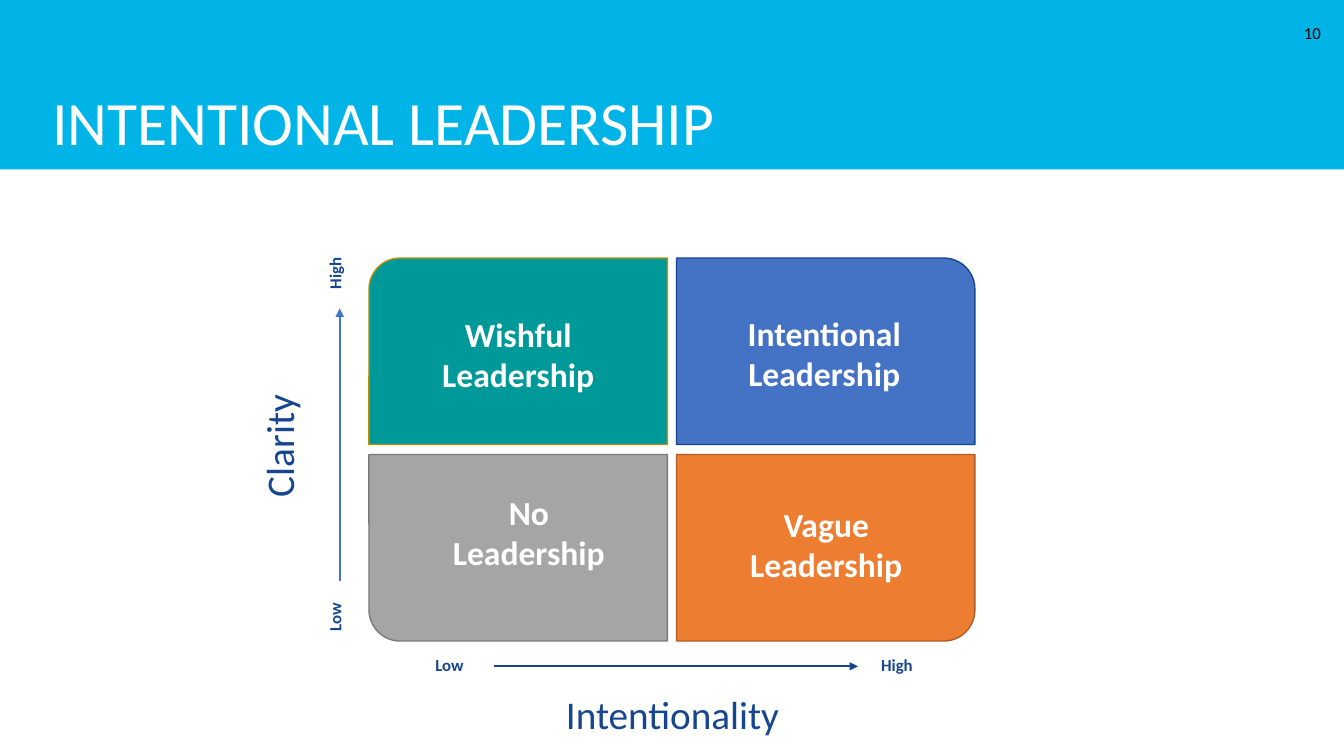
from lxml import etree
from pptx import Presentation
from pptx.dml.color import RGBColor
from pptx.enum import shapes, text
from pptx.oxml.ns import qn
from pptx.util import Inches, Pt

THEME = {
    "font": "Calibri",
    "band": "01B4E7", "white": "FFFFFF", "black": "000000",
    "navy": "16468F", "blue": "4472C4",
    "title": 44, "quadrant": 24, "axis": 28, "small": 12,
}

TITLE = "INTENTIONAL LEADERSHIP"
PAGE_NUMBER = "10"

# column, row, fill, outline, label, label place (left, top, width, height)
QUADRANTS = [
    (1, 0, "4472C4", "16468F", "Intentional Leadership", (7.14, 3.05, 2.07, 0.91)),
    (0, 0, "009999", "BD8E00", "Wishful Leadership", (4.14, 3.06, 2, 0.91)),
    (0, 1, "A5A5A5", "7A7A7A", "No Leadership", (4.22, 4.83, 2.05, 0.91)),
    (1, 1, "ED7D31", "AF5C24", "Vague Leadership", (7.16, 4.95, 2.07, 0.91)),
]
GRID_LEFT, GRID_TOP = 3.66, 2.56
CELL_WIDTH, CELL_HEIGHT = 2.96, 1.85
STEP_X, STEP_Y = 3.05, 1.95

# label, place, vertical
AXIS_NAMES = [
    ("Clarity", (2.48, 3.8, 0.67, 1.23), True),
    ("Intentionality", (4.65, 6.8, 4.04, 0.57), False),
]
AXIS_ENDS = [
    ("Low", (3.17, 5.84, 0.4, 0.52), True),
    ("High", (3.17, 2.45, 0.4, 0.52), True),
    ("Low", (4.22, 6.45, 0.52, 0.5), False),
    ("High", (8.64, 6.45, 0.62, 0.3), False),
]
# start, end, colour
ARROWS = [
    ((3.37, 5.76), (3.37, 3.06), THEME["blue"]),
    ((4.9, 6.61), (8.51, 6.61), THEME["navy"]),
]


def rgb(name):
    return RGBColor.from_string(name)


def add_block(page, kind, place, fill, outline=None):
    block = page.shapes.add_shape(kind, *map(Inches, place))
    block.shadow.inherit = False
    block.fill.solid()
    block.fill.fore_color.rgb = rgb(fill)
    if outline:
        block.line.color.rgb = rgb(outline)
        block.line.width = Pt(1)
    else:
        block.line.fill.background()
    return block


def add_text(page, words, place, *, size, color, bold=False, align="LEFT",
             anchor="TOP", vertical=False, bottom=0.05, spacing=None):
    box = page.shapes.add_textbox(*map(Inches, place))
    frame = box.text_frame
    frame.word_wrap = True
    frame.margin_bottom = Inches(bottom)
    frame.vertical_anchor = text.MSO_ANCHOR[anchor]
    if vertical:
        frame._txBody.bodyPr.set("vert", "vert270")
    para = frame.paragraphs[0]
    para.alignment = text.PP_ALIGN[align]
    para.line_spacing = spacing
    span = para.add_run()
    span.text = words
    span.font.name = THEME["font"]
    span.font.size = Pt(size)
    span.font.bold = bold
    span.font.color.rgb = rgb(color)


def add_arrow(page, start, end, color):
    arrow = page.shapes.add_connector(
        shapes.MSO_CONNECTOR.STRAIGHT, *map(Inches, start + end))
    arrow.line.color.rgb = rgb(color)
    arrow.line.width = Pt(1.5)
    etree.SubElement(arrow.line._get_or_add_ln(), qn("a:tailEnd"), type="triangle")
    etree.SubElement(arrow._element.spPr, qn("a:effectLst"))


def add_quadrant(page, column, row, fill, outline):
    """Draw one cell with its rounded corner turned to the outside of the grid."""
    place = (GRID_LEFT + column * STEP_X, GRID_TOP + row * STEP_Y,
             CELL_WIDTH, CELL_HEIGHT)
    cell = add_block(page, shapes.MSO_SHAPE.ROUND_1_RECTANGLE, place, fill, outline)
    frame = cell._element.spPr.get_or_add_xfrm()
    if column == 0:
        frame.set("flipH", "1")
    if row == 1:
        frame.set("flipV", "1")


def main():
    deck = Presentation()
    deck.slide_width, deck.slide_height = Inches(13.33), Inches(7.5)
    page = deck.slides.add_slide(deck.slide_layouts[6])

    add_block(page, shapes.MSO_SHAPE.RECTANGLE, (0, 0, 13.33, 1.68), THEME["band"])
    add_text(page, TITLE, (0.42, 0, 12.58, 1.68), size=THEME["title"],
             color=THEME["white"], anchor="BOTTOM", bottom=0.1, spacing=0.9)
    add_text(page, PAGE_NUMBER, (12.74, 0.13, 0.46, 0.4), size=THEME["small"],
             color=THEME["black"], align="RIGHT", anchor="MIDDLE")

    for column, row, fill, outline, label, place in QUADRANTS:
        add_quadrant(page, column, row, fill, outline)
        add_text(page, label, place, size=THEME["quadrant"],
                 color=THEME["white"], bold=True, align="CENTER")

    for label, place, vertical in AXIS_NAMES:
        add_text(page, label, place, size=THEME["axis"], color=THEME["navy"],
                 align="LEFT" if vertical else "CENTER", vertical=vertical)
    for start, end, color in ARROWS:
        add_arrow(page, start, end, color)
    for label, place, vertical in AXIS_ENDS:
        add_text(page, label, place, size=THEME["small"], color=THEME["navy"],
                 bold=True, vertical=vertical)

    deck.save("out.pptx")


if __name__ == "__main__":
    main()
